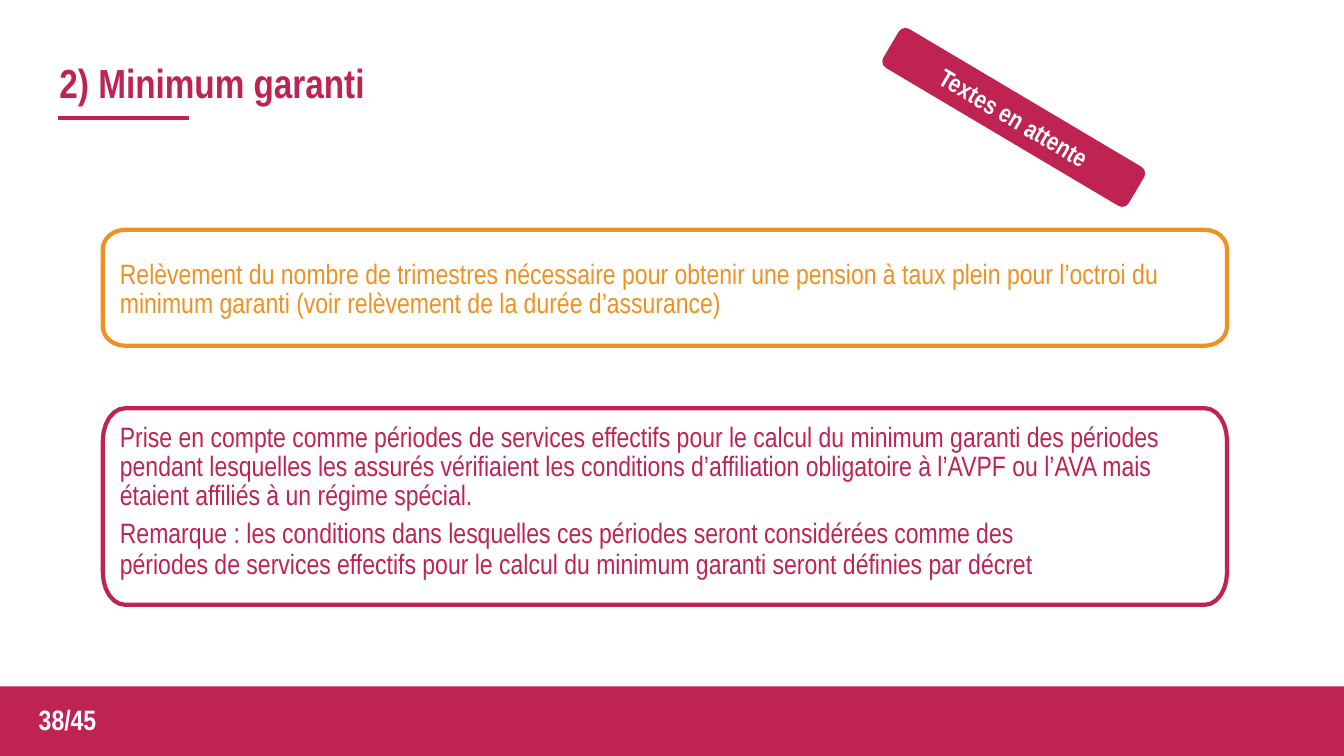
import math
from lxml import etree
from pptx import Presentation, util as u
from pptx.dml.color import RGBColor
from pptx.enum import shapes, text
from pptx.oxml.ns import qn

COLORS = {"crimson": "BE2352", "orange": "EF9121", "white": "FFFFFF"}
FONT = "Arial Narrow"

TITLE = "2) Minimum garanti"
PAGE_NUMBER = "38/45"
STATUS = "Textes en attente"
FRAMES = [
    {
        "color": "orange", "top": 2.28, "height": 1.15, "radius": 0.19,
        "text_top": 2.53, "text_height": 0.65,
        "paras": [
            ("Relèvement du nombre de trimestres nécessaire pour obtenir une pension à taux "
             "plein pour l’octroi du minimum garanti (voir relèvement de la durée d’assurance)",
             {"line_spacing": u.Pt(20.8)}),
        ],
    },
    {
        "color": "crimson", "top": 4.05, "height": 1.95, "radius": 0.32,
        "text_top": 4.15, "text_height": 1.62,
        "paras": [
            ("Prise en compte comme périodes de services effectifs pour le calcul du minimum "
             "garanti des périodes pendant lesquelles les assurés vérifiaient les conditions "
             "d’affiliation obligatoire à l’AVPF ou l’AVA mais étaient affiliés à un régime "
             "spécial.", {"line_spacing": 0.86}),
            ("Remarque : les conditions dans lesquelles ces périodes seront considérées comme des",
             {"line_spacing": u.Pt(22.3), "space_before": u.Pt(4.8)}),
            ("périodes de services effectifs pour le calcul du minimum garanti seront définies "
             "par décret", {"line_spacing": u.Pt(22.3)}),
        ],
    },
]
FRAME_LEFT, FRAME_WIDTH, FRAME_RADIUS = 1.02, 11.15, 0.22
TEXT_LEFT, TEXT_WIDTH = 1.18, 10.67
CENTER = text.PP_ALIGN.CENTER
TIGHT = {"margin_left": u.Inches(0.01), "margin_right": 0, "margin_bottom": 0}


def rgb(name):
    return RGBColor.from_string(COLORS[name])


def inches(*values):
    return [u.Inches(value) for value in values]


def apply(target, values):
    for name, value in values.items():
        setattr(target, name, value)


def write(frame, paras, size, color, bold=False, **settings):
    apply(frame, {"word_wrap": True, **settings})
    for index, (words, spacing) in enumerate(paras):
        para = frame.add_paragraph() if index else frame.paragraphs[0]
        apply(para, {"space_before": u.Pt(0), "alignment": text.PP_ALIGN.LEFT, **spacing})
        span = para.add_run()
        span.text = words
        apply(span.font, {"name": FONT, "size": u.Pt(size), "bold": bold})
        span.font.color.rgb = rgb(color)


def add_filled(page, kind, *place):
    shape = page.shapes.add_shape(kind, *inches(*place))
    shape.shadow.inherit = False
    shape.fill.solid()
    shape.fill.fore_color.rgb = rgb("crimson")
    shape.line.fill.background()
    return shape


def add_frame(page, top, height, radius, color):
    right, bottom = FRAME_LEFT + FRAME_WIDTH, top + height
    centers = [
        (right - FRAME_RADIUS, bottom - radius), (FRAME_LEFT + FRAME_RADIUS, bottom - radius),
        (FRAME_LEFT + FRAME_RADIUS, top + radius), (right - FRAME_RADIUS, top + radius),
    ]
    points = []
    for corner, (x, y) in enumerate(centers):
        for step in range(7):
            angle = math.radians(90 * corner + 15 * step)
            points.append(inches(x + FRAME_RADIUS * math.cos(angle),
                                 y + radius * math.sin(angle)))
    builder = page.shapes.build_freeform(*points[0])
    builder.add_line_segments(points[1:], close=True)
    outline = builder.convert_to_shape()
    outline.shadow.inherit = False
    outline.fill.background()
    outline.line.color.rgb = rgb(color)
    outline.line.width = u.Pt(3)


def main():
    deck = Presentation()
    deck.slide_width, deck.slide_height = inches(13.33, 7.5)
    page = deck.slides.add_slide(deck.slide_layouts[5])

    add_filled(page, shapes.MSO_SHAPE.RECTANGLE, 0, 6.81, 13.33, 0.69)

    title = page.shapes.title
    title.left, title.top, title.width, title.height = inches(0.58, 0.56, 9.24, 0.5)
    write(title.text_frame, [(TITLE, {})], 29, "crimson", True, margin_top=u.Inches(0.01),
          vertical_anchor=text.MSO_ANCHOR.MIDDLE, auto_size=text.MSO_AUTO_SIZE.NONE, **TIGHT)

    for item in FRAMES:
        box = page.shapes.add_textbox(
            *inches(TEXT_LEFT, item["text_top"], TEXT_WIDTH, item["text_height"]))
        write(box.text_frame, item["paras"], 20, item["color"],
              margin_top=u.Inches(0.06), **TIGHT)
        add_frame(page, item["top"], item["height"], item["radius"], item["color"])

    number = page.shapes.add_textbox(*inches(0.17, 6.92, 1, 0.44))
    write(number.text_frame, [(PAGE_NUMBER, {"alignment": CENTER})], 20, "white", True)

    underline = page.shapes.add_connector(
        shapes.MSO_CONNECTOR.STRAIGHT, *inches(0.58, 1.17, 1.87, 1.17))
    underline.line.color.rgb = rgb("crimson")
    underline.line.width = u.Pt(3)
    etree.SubElement(underline._element.spPr, qn("a:effectLst"))

    banner = add_filled(page, shapes.MSO_SHAPE.ROUNDED_RECTANGLE, 8.64, 0.94, 2.83, 0.45)
    banner.rotation = 30.7
    write(banner.text_frame, [(STATUS, {"alignment": CENTER})], 18, "white", True)

    deck.save("out.pptx")


if __name__ == "__main__":
    main()
